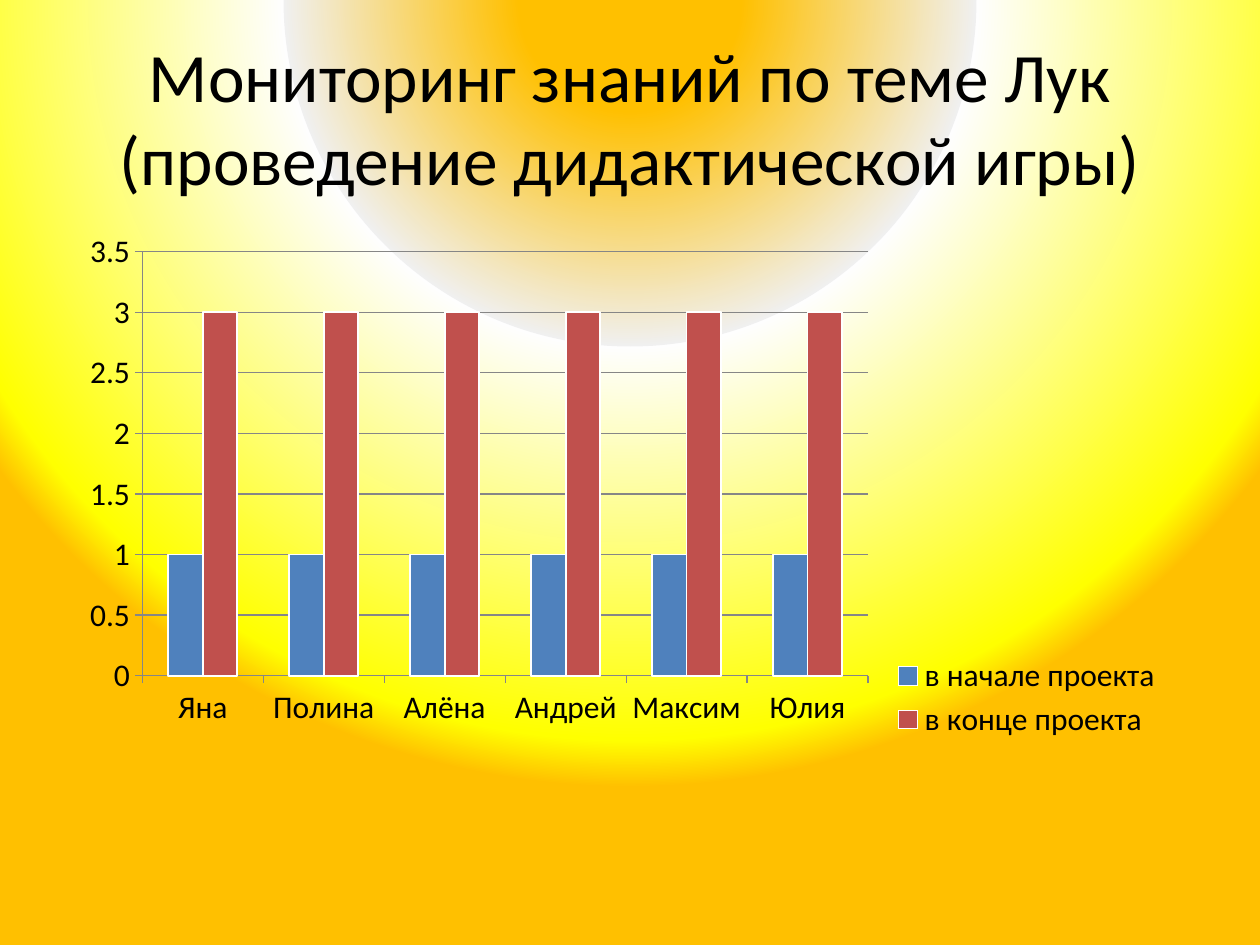
import pptx
import pptx.chart.data
import pptx.dml.color
import pptx.enum.chart
import pptx.enum.text
import pptx.oxml
import pptx.oxml.ns
import pptx.util
from pptx.util import Inches, Pt

TITLE = "Мониторинг знаний по теме Лук (проведение дидактической игры)"
CHILDREN = ["Яна", "Полина", "Алёна", "Андрей", "Максим", "Юлия"]
SERIES = [
    ("в начале проекта", [1] * len(CHILDREN), "blue"),
    ("в конце проекта", [3] * len(CHILDREN), "red"),
]
COLORS = {"text": "000000", "blue": "4F81BD", "red": "C0504D",
          "grid": "868686", "outline": "FFFFFF"}
# Position in percent, colour, opacity in percent
GRADIENT = [(14, "FFC000", 100), (44, "F0F0F0", 100), (44, "FEFEFE", 100),
            (94, "FFFF00", 80), (100, "FFC000", 100)]
# Shares of the chart area
PLOT_LAYOUT = {"x": 0.07, "y": 0.05, "w": 0.64, "h": 0.68}
LEGEND_LAYOUT = {"x": 0.72, "y": 0.69, "w": 0.26, "h": 0.15}


def rgb(name):
    return pptx.dml.color.RGBColor.from_string(COLORS[name])


def format_font(font, size):
    for key, value in {"name": "Calibri", "size": Pt(size), "bold": False}.items():
        setattr(font, key, value)
    font.color.rgb = rgb("text")


def format_line(line, color, width):
    line.color.rgb = rgb(color)
    line.width = Pt(width)


def paint_background(slide):
    """Fill the slide with a circular gradient centred above its top edge."""
    slide.background.fill.gradient()
    old = slide.element.find(".//" + pptx.oxml.ns.qn("a:gradFill"))
    stops = "".join(
        f'<a:gs pos="{position * 1000}"><a:srgbClr val="{color}">'
        f'<a:alpha val="{opacity * 1000}"/></a:srgbClr></a:gs>'
        for position, color, opacity in GRADIENT)
    new = pptx.oxml.parse_xml(
        f'<a:gradFill {pptx.oxml.ns.nsdecls("a")} rotWithShape="1">'
        f'<a:gsLst>{stops}</a:gsLst><a:path path="circle">'
        '<a:fillToRect l="50000" t="-80000" r="50000" b="180000"/>'
        '</a:path></a:gradFill>')
    old.getparent().replace(old, new)


def set_layout(element, shares, inner=False):
    """Give a plot area or a legend a fixed place inside the chart."""
    for old in element.findall(pptx.oxml.ns.qn("c:layout")):
        element.remove(old)
    target = '<c:layoutTarget val="inner"/>' if inner else ""
    modes = '<c:xMode val="edge"/><c:yMode val="edge"/>'
    places = "".join(f'<c:{key} val="{value}"/>' for key, value in shares.items())
    layout = pptx.oxml.parse_xml(
        f'<c:layout {pptx.oxml.ns.nsdecls("c")}><c:manualLayout>'
        f'{target}{modes}{places}</c:manualLayout></c:layout>')
    position = element.find(pptx.oxml.ns.qn("c:legendPos"))
    element.insert(0 if position is None else 1, layout)


def add_title(slide):
    title = slide.shapes.title
    title.left, title.top = Inches(0.5), Inches(0.3)
    title.width, title.height = Inches(9), Inches(1.25)
    frame = title.text_frame
    frame.text = TITLE
    frame.word_wrap = True
    frame.vertical_anchor = pptx.enum.text.MSO_ANCHOR.MIDDLE
    para = frame.paragraphs[0]
    para.alignment = pptx.enum.text.PP_ALIGN.CENTER
    format_font(para.runs[0].font, 39.6)


def add_results_chart(slide):
    data = pptx.chart.data.CategoryChartData()
    data.categories = CHILDREN
    for name, values, _ in SERIES:
        data.add_series(name, values)
    chart = slide.shapes.add_chart(
        pptx.enum.chart.XL_CHART_TYPE.COLUMN_CLUSTERED,
        Inches(0.5), Inches(1.75), Inches(9), Inches(4.95), data).chart
    format_font(chart.font, 18)
    chart.has_title = False

    plot = chart.plots[0]
    plot.gap_width, plot.overlap = 150, 0
    plot.vary_by_categories = False
    for series, (_, _, color) in zip(plot.series, SERIES):
        series.format.fill.solid()
        series.format.fill.fore_color.rgb = rgb(color)
        format_line(series.format.line, "outline", 1)

    for axis in (chart.category_axis, chart.value_axis):
        axis.major_tick_mark = pptx.enum.chart.XL_TICK_MARK.OUTSIDE
        axis.minor_tick_mark = pptx.enum.chart.XL_TICK_MARK.NONE
        format_line(axis.format.line, "grid", 0.75)
    scale = chart.value_axis
    scale.minimum_scale, scale.maximum_scale, scale.major_unit = 0, 3.5, 0.5
    scale.has_major_gridlines = True
    format_line(scale.major_gridlines.format.line, "grid", 0.75)

    chart.has_legend = True
    legend = chart.legend
    legend.position = pptx.enum.chart.XL_LEGEND_POSITION.RIGHT
    legend.include_in_layout = False
    chart_space = plot.chart.element if hasattr(plot.chart, "element") else chart.element
    for tag, shares, inner in (("c:plotArea", PLOT_LAYOUT, True),
                               ("c:legend", LEGEND_LAYOUT, False)):
        element = chart_space.find(".//" + pptx.oxml.ns.qn(tag))
        set_layout(element, shares, inner)


def main():
    deck = pptx.Presentation()
    deck.slide_width, deck.slide_height = Inches(10), Inches(7.5)
    slide = deck.slides.add_slide(deck.slide_layouts.get_by_name("Title Only"))
    paint_background(slide)
    add_title(slide)
    add_results_chart(slide)
    deck.save("out.pptx")


if __name__ == "__main__":
    main()
